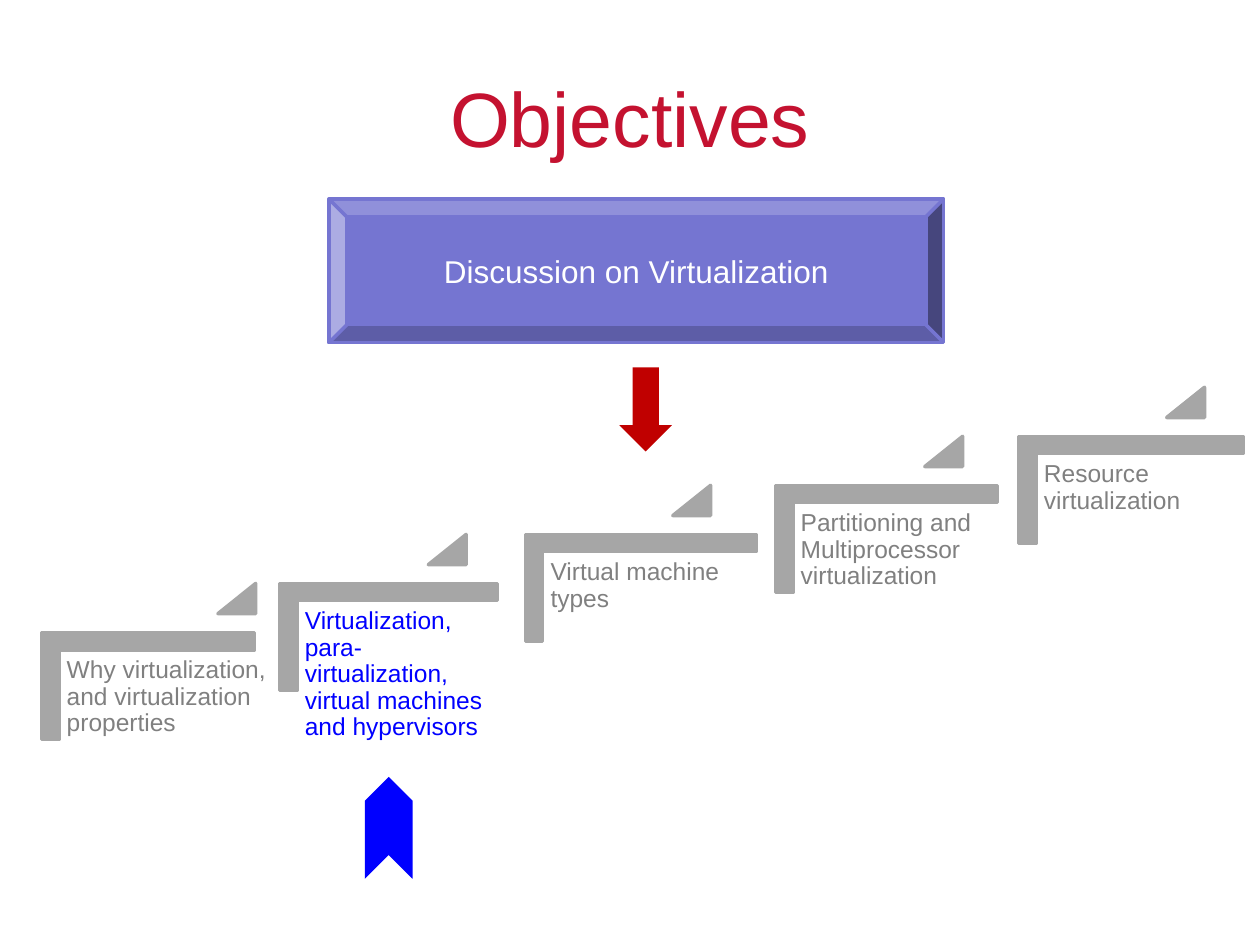
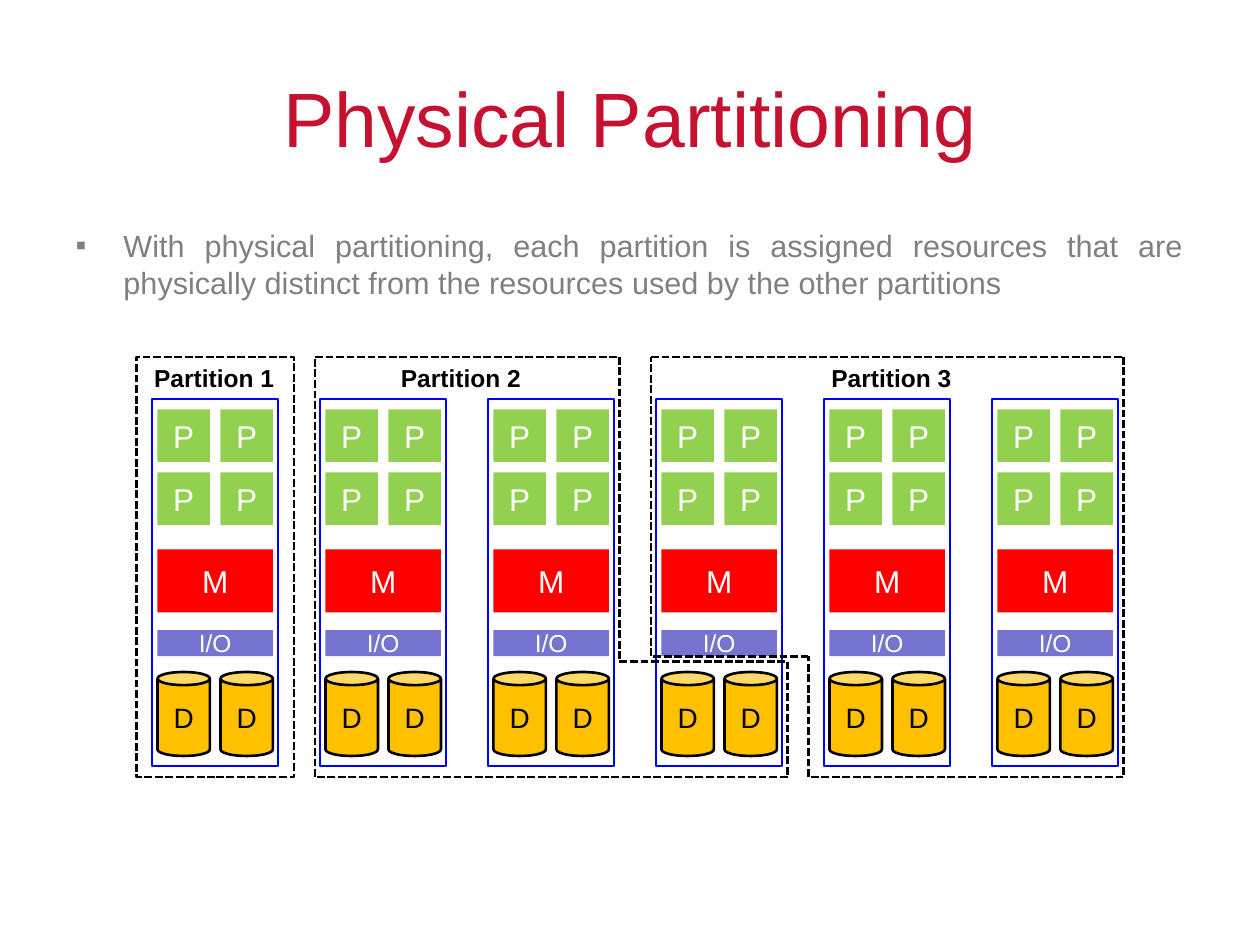
from itertools import product

from lxml.etree import SubElement
from pptx import Presentation
from pptx.dml.color import RGBColor as Rgb
from pptx.enum.dml import MSO_LINE as Dash
from pptx.enum.shapes import MSO_CONNECTOR as Link, MSO_SHAPE as Kind
from pptx.enum.text import MSO_ANCHOR as Anchor, MSO_AUTO_SIZE as Fit, PP_ALIGN as Align
from pptx.oxml.ns import qn
from pptx.util import Emu, Inches, Pt

COLS, ROWS = 120, 90
WIDE, HIGH = Inches(10), Inches(7.5)
FONT = "Arial"
HUES = {
    "title": "C41230", "text": "808080", "white": "FFFFFF", "black": "000000",
    "violet": "7575D1", "step": "A6A6A6", "arrow": "C00000", "blue": "0000FF",
    "cpu": "92D050", "mem": "FF0000", "disk": "FFC000",
}
STEPS = [
    ("Why virtualization, and virtualization properties", 3.96, 20.28, 20.4, 20.76),
    ("Virtualization, para-virtualization, virtual machines and hypervisors",
     26.64, 20.76, 18.72, 40.8),
    ("Virtual machine types", 50.04, 21.96, 19.92, 64.08),
    ("Partitioning and Multiprocessor virtualization", 73.86, 21.12, 19.08, 88.08),
    ("Resource virtualization", 97.02, 21.36, 19.32, 111.12),
]
NOW = 1
RISE = 4.67


def col(n):
    """Turn grid columns into a length."""
    return Emu(round(n * WIDE / COLS))


def row(n):
    """Turn grid rows into a length."""
    return Emu(round(n * HIGH / ROWS))


def place(box):
    """Turn a grid box into left, top, width and height."""
    x, y, w, h = box
    return col(x), row(y), col(w), row(h)


def hue(name):
    """Look up a colour by name."""
    return Rgb.from_string(HUES[name])


def write(frame, text, size, tone, align=Align.CENTER, bold=False):
    """Set the only paragraph of a frame and style it."""
    para = frame.paragraphs[0]
    para.text = text
    para.alignment = align
    for run in para.runs:
        font = run.font
        font.name, font.size, font.bold = FONT, Pt(size), bold
        font.color.rgb = hue(tone)
    return para


def inset(frame, left=0, top=0, right=0, base=0):
    """Set the four margins of a frame in inches."""
    frame.margin_left, frame.margin_top = Inches(left), Inches(top)
    frame.margin_right, frame.margin_bottom = Inches(right), Inches(base)


def stroke(line, tone, width, dash=None):
    """Style a line."""
    line.color.rgb = hue(tone)
    line.width = Pt(width)
    if dash:
        line.dash_style = dash


def draw(slide, kind, box, fill=None, line=None, turn=0, bends=()):
    """Add a preset shape that fills the box as seen after its turn."""
    x, y, w, h = box
    if turn:
        x, y, w, h = x + (w - h) / 2, y + (h - w) / 2, h, w
    shape = slide.shapes.add_shape(kind, *place((x, y, w, h)))
    shape.shadow.inherit = False
    shape.rotation = turn
    for i, bend in enumerate(bends):
        shape.adjustments[i] = bend
    if fill:
        shape.fill.solid()
        shape.fill.fore_color.rgb = hue(fill)
    else:
        shape.fill.background()
    if line:
        stroke(shape.line, *line)
    else:
        shape.line.fill.background()
    return shape


def label(shape, text, size, tone):
    """Centre a word in a shape."""
    frame = shape.text_frame
    frame.vertical_anchor = Anchor.MIDDLE
    inset(frame)
    write(frame, text, size, tone)


def start(deck, kind, title):
    """Add a slide with the shared title style."""
    slide = deck.slides.add_slide(deck.slide_layouts[kind])
    head = slide.shapes.title
    head.left, head.top, head.width, head.height = place((6, 3.6, 108, 15))
    head.text_frame.vertical_anchor = Anchor.MIDDLE
    write(head.text_frame, title, 44, "title")
    return slide


def stair(slide, box, text, span, peak, tone):
    """Draw one step with its text and the marker above it."""
    x, y, w, h = box
    edge = ("step", 2)
    draw(slide, Kind.CORNER, box, "step", edge, 90, (0.161, 0.161))
    note = slide.shapes.add_textbox(*place((x + 1.68, y + 1.68, span, 13.44)))
    frame = note.text_frame
    frame.word_wrap = True
    inset(frame, 0.06, 0.06, 0, 0.06)
    write(frame, text, 14, tone, Align.LEFT).line_spacing = 0.9
    mark = (peak, y - RISE, 3.6, 2.88)
    draw(slide, Kind.ISOSCELES_TRIANGLE, mark, "step", edge, bends=(1,))


def goals(deck):
    """Build the slide of objectives."""
    slide = start(deck, 5, "Objectives")
    topic = draw(slide, Kind.BEVEL, (31.32, 18.96, 58.56, 13.68), "violet", ("violet", 2))
    label(topic, "Discussion on Virtualization", 18, "white")
    draw(slide, Kind.DOWN_ARROW, (59, 35, 5, 8), "arrow")
    for i, (text, x, w, span, peak) in enumerate(STEPS):
        tone = "blue" if i == NOW else "text"
        stair(slide, (x, 60.24 - i * RISE, w, 10.2), text, span, peak, tone)
    draw(slide, Kind.CHEVRON, (34.74, 73.98, 4.56, 9.72), "blue", turn=270)


def node(slide, box):
    """Draw one unit of processors, memory, I/O and disks in its frame."""
    x, y, w, h = box
    x, y = x + 0.5, y + 1
    for down, over in product((0, 6), repeat=2):
        label(draw(slide, Kind.RECTANGLE, (x + over, y + down, 5, 5), "cpu"), "P", 18, "white")
    label(draw(slide, Kind.RECTANGLE, (x, y + 13.33, 11, 6), "mem"), "M", 18, "white")
    label(draw(slide, Kind.RECTANGLE, (x, y + 21, 11, 2.5), "violet"), "I/O", 14, "white")
    for over in (0, 6):
        can = draw(slide, Kind.CAN, (x + over, y + 25, 5, 8), "disk", ("black", 1.5))
        frame = can.text_frame
        label(can, "D", 16, "black")
    draw(slide, Kind.RECTANGLE, box, line=("blue", 1))


def fence(slide, spots):
    """Join the spots by dashed lines into a closed outline."""
    for (x, y), (u, v) in zip(spots, spots[1:] + spots[:1]):
        side = slide.shapes.add_connector(Link.STRAIGHT, col(x), row(y), col(u), row(v))
        stroke(side.line, "black", 1.5, Dash.SQUARE_DOT)
        SubElement(side._element.spPr, qn("a:effectLst"))


def point(slide, box, text):
    """Fill the body placeholder with one bulleted, justified paragraph."""
    body = slide.placeholders[1]
    body.left, body.top, body.width, body.height = place(box)
    frame = body.text_frame
    frame.auto_size = Fit.NONE
    para = frame.paragraphs[0]
    props = para._p.get_or_add_pPr()
    props.set("marL", str(Inches(0.38)))
    props.set("indent", str(-Inches(0.38)))
    SubElement(props, qn("a:buChar")).set("char", "▪")
    write(frame, text, 17.5, "text", Align.JUSTIFY)
    para.space_before = Pt(0)


def parts(deck):
    """Build the slide on physical partitioning."""
    slide = start(deck, 1, "Physical Partitioning")
    point(slide, (6, 21, 108, 11),
          "With physical partitioning, each partition is assigned resources that are "
          "physically distinct from the resources used by the other partitions")
    for i in range(6):
        node(slide, (14.5 + 16 * i, 38, 12, 35))
    top, base = 34, 74
    draw(slide, Kind.RECTANGLE, (13, top, 15, base - top),
         line=("black", 1.5, Dash.SQUARE_DOT))
    fence(slide, [(30, top), (59, top), (59, 63), (75, 63), (75, base), (30, base)])
    fence(slide, [(62, top), (107, top), (107, base), (77, base), (77, 62.5), (62, 62.5)])
    for i, x in enumerate((13.5, 37, 78), 1):
        name = slide.shapes.add_textbox(*place((x, top, 13.92, 4)))
        name.text_frame.word_wrap = False
        write(name.text_frame, f"Partition {i}", 14, "black", Align.LEFT, True)


def main():
    """Build and save the deck."""
    deck = Presentation()
    deck.slide_width, deck.slide_height = WIDE, HIGH
    goals(deck)
    parts(deck)
    deck.save("out.pptx")


if __name__ == "__main__":
    main()
